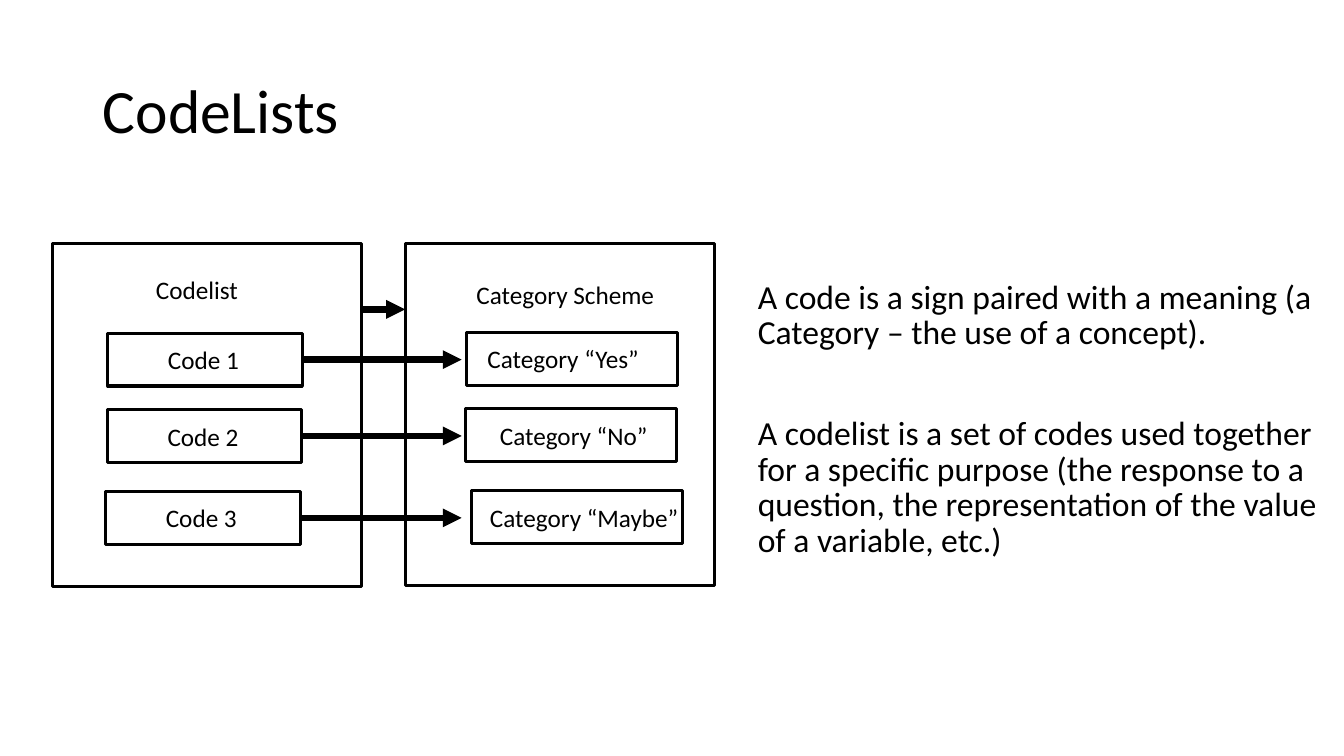
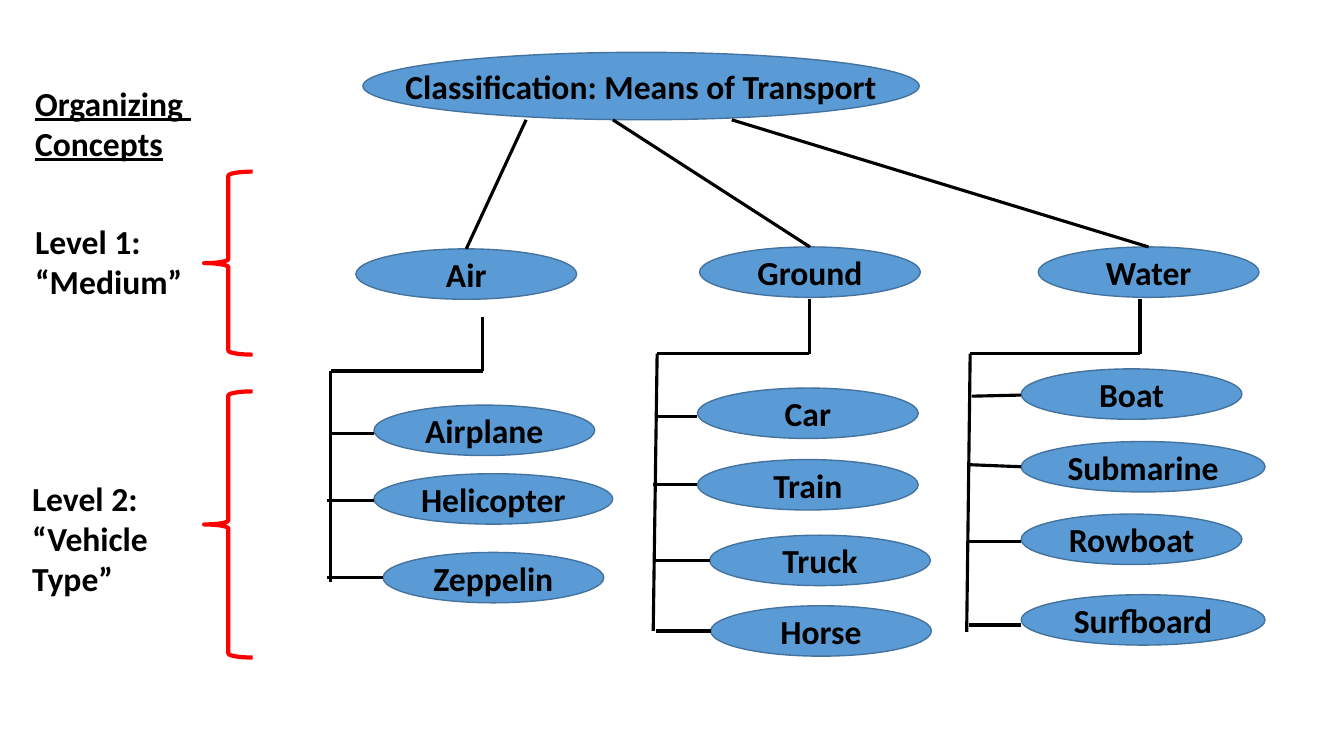
"""Builds two slides: a codelist diagram and a transport classification tree."""
from pptx import Presentation
from pptx import util as u
from pptx.dml.color import RGBColor
from pptx.enum import shapes, text
from pptx.oxml.ns import qn
from lxml import etree

Pt = u.Pt
FONT = "Calibri"
BLACK, RED, BLUE, BLUE_EDGE = "000000", "FF0000", "5B9BD5", "43739E"
RECT = shapes.MSO_SHAPE.RECTANGLE
OVAL = shapes.MSO_SHAPE.OVAL
BRACE = shapes.MSO_SHAPE.LEFT_BRACE
TOP, MIDDLE = text.MSO_ANCHOR.TOP, text.MSO_ANCHOR.MIDDLE
LEFT, CENTER = text.PP_ALIGN.LEFT, text.PP_ALIGN.CENTER

TITLE = "CodeLists"
TITLE_AREA = (66.2, 28.8, 828, 104.4)
FRAME_SIZE = (221, 244.8)
FRAMES = [
    ("Codelist", 37.4, 174.2, 74, 21.6),
    ("Category Scheme", 289.4, 173.7, 51, 26),
]
BOX_HEIGHT, CODE_WIDTH, CATEGORY_WIDTH = 37.8, 139, 150.8
CODE_INDENT = 43
PAIRS = [
    (("Code 1", 77, 238), ("Category “Yes”", 333.2, 237.4, 15)),
    (("Code 2", 76.7, 292.5), ("Category “No”", 332.6, 292, 24.5)),
    (("Code 3", 75.5, 351), ("Category “Maybe”", 337, 350.4, 13)),
]
ARROW_END, FRAME_ARROW_Y = 329.8, 221
DEFINITIONS = [
    "A code is a sign paired with a meaning (a Category – the use of a concept).",
    "A codelist is a set of codes used together for a specific purpose (the response "
    "to a question, the representation of the value of a variable, etc.)",
]
DEFINITIONS_AREA = (534.2, 197, 422, 260)

ROOT = ("Classification: Means of Transport", 259.2, 37.4, 397.4, 48.2)
NODE_WIDTH, NODE_HEIGHT, STEM = 157.7, 36, 38.9
BRANCHES = [
    {"node": ("Air", 254.2, 177.8), "root_x": 375.8, "stem": (344.9, 226.1),
     "spine": (236.2, 236.2, 415.4),
     "leaves": [("Airplane", 267.1, 289.4, NODE_WIDTH, 236.2, 309.6, 309.6),
                ("Helicopter", 267.1, 338.4, 170.6, 233.3, 357.8, 357.8),
                ("Zeppelin", 273.6, 394.6, NODE_WIDTH, 233.3, 412.6, 412.6)]},
    {"node": ("Ground", 499.7, 176.4), "root_x": 437.8, "stem": (578.2, 213.8),
     "spine": (469.4, 466.6, 450.7),
     "leaves": [("Car", 498.2, 277.2, NODE_WIDTH, 469.4, 297.4, 297.4),
                ("Train", 498.2, 328.3, NODE_WIDTH, 466.6, 346.3, 346.3),
                ("Truck", 506.9, 382.3, NODE_WIDTH, 466.6, 400.3, 400.3),
                ("Horse", 507.6, 432.7, NODE_WIDTH, 468.7, 450.7, 450.7)]},
    {"node": ("Water", 741.6, 176.4), "root_x": 522.7, "stem": (814.3, 213.8),
     "spine": (693, 690.5, 451.4),
     "leaves": [("Boat", 729.4, 263.5, NODE_WIDTH, 694.1, 283, 282.2),
                ("Submarine", 729.4, 315.4, 174.2, 691.2, 331.9, 333.4),
                ("Rowboat", 729.4, 367.2, NODE_WIDTH, 691.2, 386.6, 386.6),
                ("Surfboard", 729.4, 424.8, 174.2, 691.9, 446.4, 446.4)]},
]
LABELS = [
    (["Organizing ", "Concepts"], (18, 55.4, 126.7, 65.5), True),
    (["Level 1:", "“Medium”"], (18, 154.1, 121, 65.5), False),
    (["Level 2:", "“Vehicle", "Type”"], (15.8, 337.7, 98, 94.3), False),
]
BRACES = [(145.8, 122.6, 34.6, 130.7), (145.8, 279.6, 34.6, 190.1)]


def rgb(value):
    return RGBColor.from_string(value)


def points(*values):
    return [Pt(value) for value in values]


def write(shape, lines, size, bold=False, underline=None, align=LEFT, anchor=TOP,
          margins=(7.2, 3.6, 7.2, 3.6), wrap=False):
    frame = shape.text_frame
    frame.word_wrap = wrap
    frame.vertical_anchor = anchor
    frame.margin_left, frame.margin_top, frame.margin_right, frame.margin_bottom = points(*margins)
    frame.text = "\n".join(lines)
    for para in frame.paragraphs:
        para.alignment = align
        font = para.font
        font.name, font.size, font.bold, font.underline = FONT, Pt(size), bold, underline
        font.color.rgb = rgb(BLACK)
    return frame.paragraphs


def add_shape(page, kind, area, fill=None, line=BLACK, weight=2.25):
    shape = page.shapes.add_shape(kind, *points(*area))
    shape.shadow.inherit = False
    if fill:
        shape.fill.solid()
        shape.fill.fore_color.rgb = rgb(fill)
    else:
        shape.fill.background()
    shape.line.color.rgb = rgb(line)
    shape.line.width = Pt(weight)
    return shape


def add_box(page, label, area, indent, top=0, anchor=MIDDLE):
    box = add_shape(page, RECT, area)
    write(box, [label], 18, anchor=anchor, margins=(indent, top, 0, 0))
    return box


def add_node(page, label, *area):
    node = add_shape(page, OVAL, area, BLUE, BLUE_EDGE, 1)
    write(node, [label], 24, bold=True, align=CENTER, anchor=MIDDLE, margins=(0, 0, 0, 0))


def add_line(page, x1, y1, x2, y2, weight=2.25, arrow=False):
    line = page.shapes.add_connector(shapes.MSO_CONNECTOR.STRAIGHT, *points(x1, y1, x2, y2))
    line.line.color.rgb = rgb(BLACK)
    line.line.width = Pt(weight)
    if arrow:
        etree.SubElement(line.line._get_or_add_ln(), qn("a:tailEnd"), type="triangle")
    etree.SubElement(line._element.spPr, qn("a:effectLst"))
    return line


def build_codelists(deck):
    page = deck.slides.add_slide(deck.slide_layouts[5])
    title = page.shapes.title
    title.left, title.top, title.width, title.height = points(*TITLE_AREA)
    write(title, [TITLE], 44, anchor=MIDDLE, wrap=True)[0].line_spacing = 0.9

    definitions = page.shapes.add_textbox(*points(*DEFINITIONS_AREA))
    paras = write(definitions, DEFINITIONS, 24, wrap=True)
    for para in paras:
        para.line_spacing = 0.88
    paras[1].space_before = Pt(47)

    for label, left, top, indent, drop in FRAMES:
        add_box(page, label, (left, top, *FRAME_SIZE), indent, drop, TOP)
    add_line(page, FRAMES[0][1] + FRAME_SIZE[0], FRAME_ARROW_Y, FRAMES[1][1], FRAME_ARROW_Y,
             4.5, True)

    for (code, left, top), (category, category_left, category_top, indent) in PAIRS:
        box = add_box(page, code, (left, top, CODE_WIDTH, BOX_HEIGHT), CODE_INDENT)
        add_box(page, category, (category_left, category_top, CATEGORY_WIDTH, BOX_HEIGHT), indent)
        middle = top + BOX_HEIGHT / 2
        arrow = add_line(page, left + CODE_WIDTH, middle, ARROW_END, middle, 4.5, True)
        arrow.begin_connect(box, 3)


def build_classification(deck):
    page = deck.slides.add_slide(deck.slide_layouts[6])
    add_node(page, *ROOT)
    root_bottom = ROOT[2] + ROOT[4]
    for branch in BRANCHES:
        label, left, top = branch["node"]
        add_node(page, label, left, top, NODE_WIDTH, NODE_HEIGHT)
        add_line(page, branch["root_x"], root_bottom, left + NODE_WIDTH / 2, top)

        stem_x, stem_top = branch["stem"]
        spine_x, foot_x, foot_y = branch["spine"]
        bar_y = stem_top + STEM
        add_line(page, stem_x, stem_top, stem_x, bar_y)
        add_line(page, stem_x, bar_y, spine_x, bar_y)
        add_line(page, spine_x, bar_y, foot_x, foot_y)

        for leaf, left, top, width, tick_x, tick_y, end_y in branch["leaves"]:
            add_node(page, leaf, left, top, width, NODE_HEIGHT)
            add_line(page, tick_x, tick_y, left, end_y)

    for area in BRACES:
        add_shape(page, BRACE, area, line=RED, weight=3)
    for lines, area, underline in LABELS:
        write(page.shapes.add_textbox(*points(*area)), lines, 24, True, underline)


def main():
    deck = Presentation()
    deck.slide_width, deck.slide_height = points(960, 540)
    build_codelists(deck)
    build_classification(deck)
    deck.save("out.pptx")


if __name__ == "__main__":
    main()
